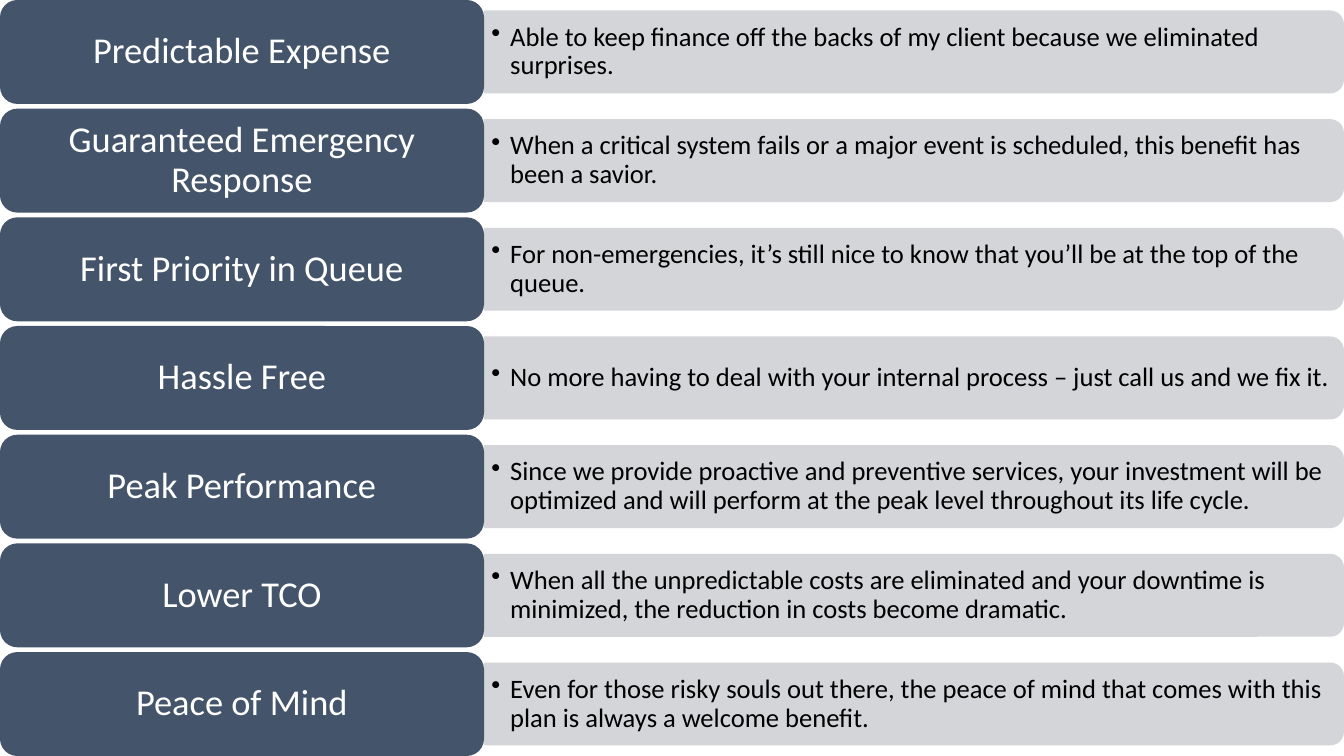
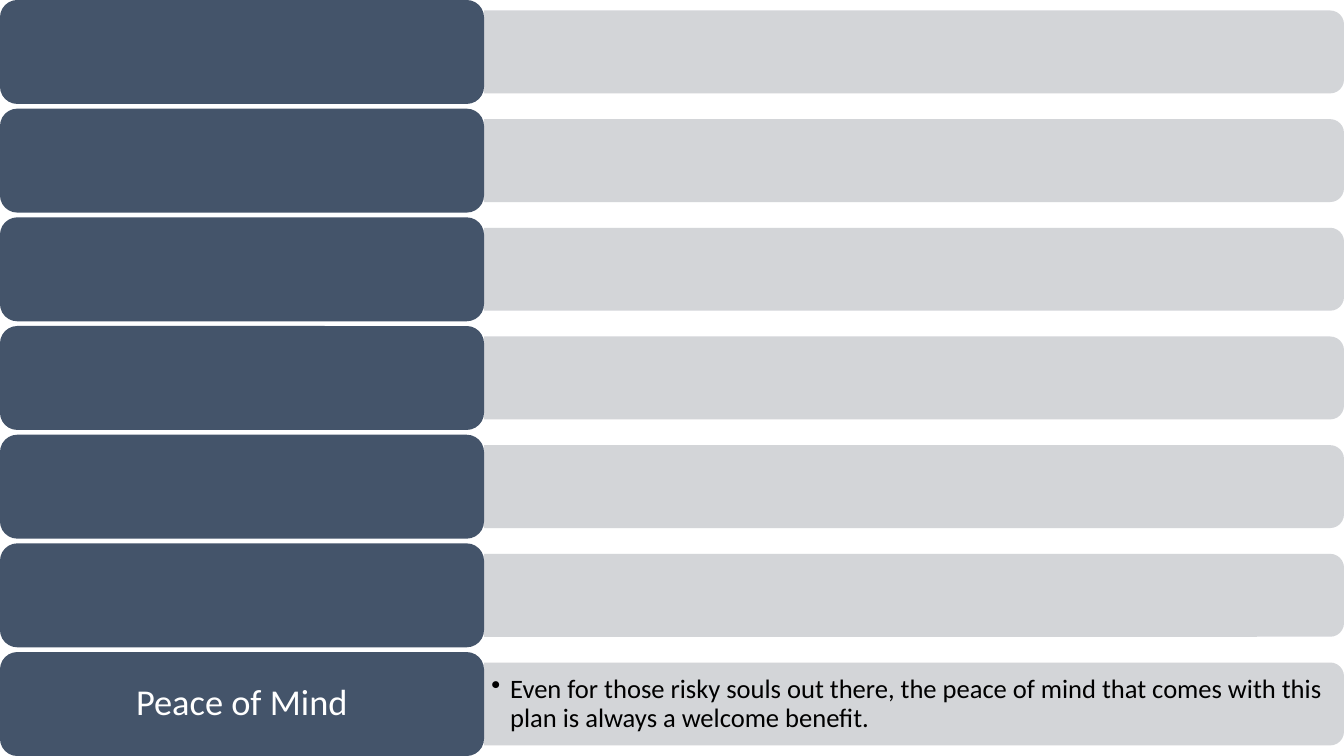
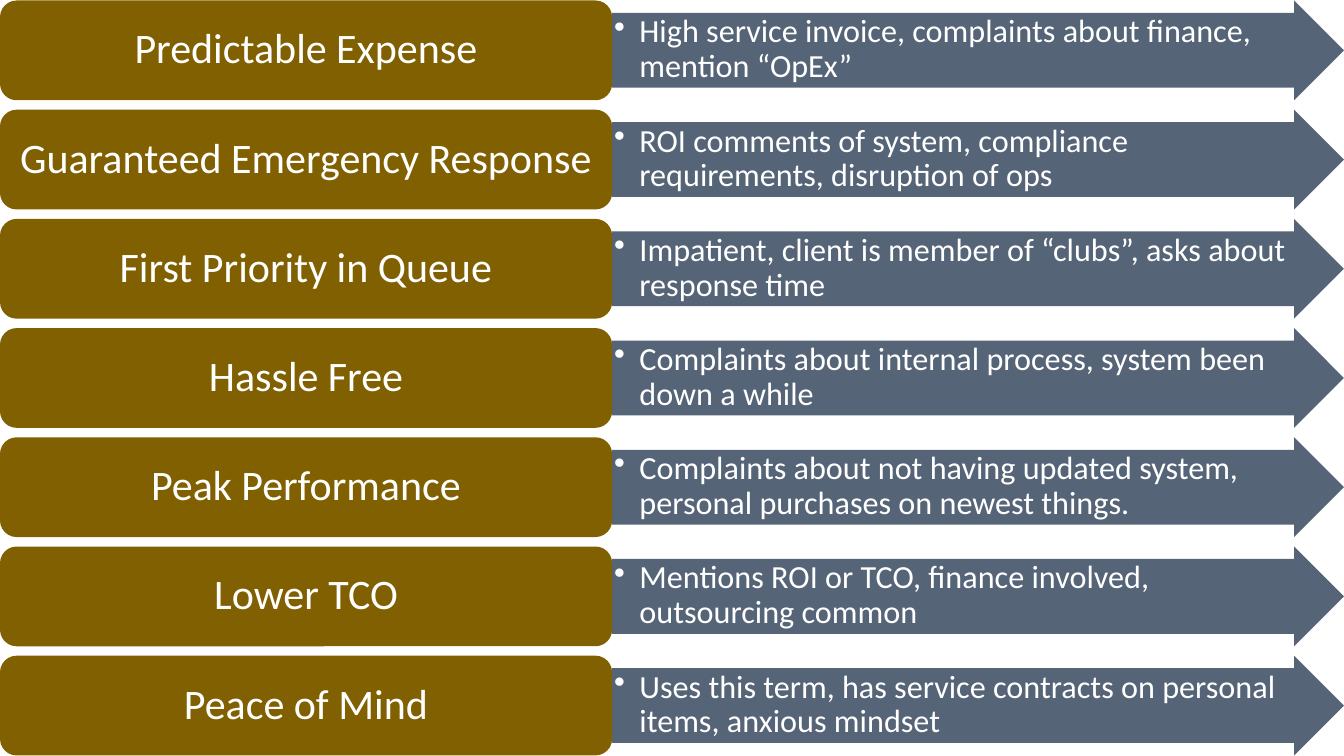
from pptx import Presentation
from pptx.dml.color import RGBColor
from pptx.enum.shapes import MSO_SHAPE
from pptx.enum.text import MSO_ANCHOR, PP_ALIGN
from pptx.oxml.ns import qn
from pptx.util import Emu, Pt
from lxml.etree import SubElement

SCALE = 9525
PAGE_WIDTH, PAGE_HEIGHT = 1280, 720
FONT = "Calibri"
SLATE, OLIVE, SILVER = "44546A", "806000", "CFD1D4"
WHITE, BLACK = "FFFFFF", "000000"

BENEFITS = [
    ("Predictable Expense",
     "Able to keep finance off the backs of my client because we eliminated surprises.",
     "High service invoice, complaints about finance, mention “OpEx”"),
    ("Guaranteed Emergency Response",
     "When a critical system fails or a major event is scheduled, this benefit has been a savior.",
     "ROI comments of system, compliance requirements, disruption of ops"),
    ("First Priority in Queue",
     "For non-emergencies, it’s still nice to know that you’ll be at the top of the queue.",
     "Impatient, client is member of “clubs”, asks about response time"),
    ("Hassle Free",
     "No more having to deal with your internal process – just call us and we fix it.",
     "Complaints about internal process, system been down a while"),
    ("Peak Performance",
     "Since we provide proactive and preventive services, your investment will be optimized "
     "and will perform at the peak level throughout its life cycle.",
     "Complaints about not having updated system, personal purchases on newest things."),
    ("Lower TCO",
     "When all the unpredictable costs are eliminated and your downtime is minimized, "
     "the reduction in costs become dramatic.",
     "Mentions ROI or TCO, finance involved, outsourcing common"),
    ("Peace of Mind",
     "Even for those risky souls out there, the peace of mind that comes with this plan "
     "is always a welcome benefit.",
     "Uses this term, has service contracts on personal items, anxious mindset"),
]

LABEL_STYLES = {
    "benefit": {"fill": SLATE, "size": 26, "margins": (10, 5, 10, 5)},
    "signal": {"fill": OLIVE, "size": 30, "margins": (12, 6, 12, 6)},
}


def px(length):
    """Turn pixels into EMU."""
    return Emu(round(length * SCALE))


def color(value):
    """Turn a hex string into a colour."""
    return RGBColor.from_string(value)


def add_block(page, kind, box, fill, opacity=100):
    """Draw a flat preset shape without outline or shadow."""
    shape = page.shapes.add_shape(kind, *map(px, box))
    shape.shadow.inherit = False
    shape.line.fill.background()
    shape.fill.solid()
    shape.fill.fore_color.rgb = color(fill)
    if opacity < 100:
        tint = shape._element.spPr.find(qn("a:solidFill"))[0]
        SubElement(tint, qn("a:alpha"), val=str(opacity * 1000))
    return shape


def write(shape, text, size, ink, margins, anchor=MSO_ANCHOR.MIDDLE, hang=0):
    """Put one paragraph in a shape, centred or with a hanging bullet."""
    frame = shape.text_frame
    sides = ("margin_left", "margin_top", "margin_right", "margin_bottom")
    layout = dict(zip(sides, map(px, margins)), word_wrap=True, vertical_anchor=anchor)
    for name, value in layout.items():
        setattr(frame, name, value)
    para = frame.paragraphs[0]
    para.line_spacing = 0.9
    para.alignment = PP_ALIGN.LEFT if hang else PP_ALIGN.CENTER
    if hang:
        para.level = 1
        properties = para._p.get_or_add_pPr()
        properties.set("marL", str(px(hang)))
        properties.set("indent", str(px(-hang)))
        SubElement(properties, qn("a:buChar"), char="•")
    span = para.add_run()
    span.text = text
    for name, value in {"name": FONT, "size": Pt(size)}.items():
        setattr(span.font, name, value)
    span.font.color.rgb = color(ink)


def add_label(page, box, text, style):
    """Draw the rounded heading at the left of a row."""
    label = add_block(page, MSO_SHAPE.ROUNDED_RECTANGLE, box, style["fill"])
    if text:
        write(label, text, style["size"], WHITE, style["margins"])


def add_bar(page, box, text):
    """Draw a bar rounded on its right side, with any bullet text."""
    left, top, width, height = box
    shift = (width - height) / 2
    upright = (left + shift, top - shift, height, width)
    bar = add_block(page, MSO_SHAPE.ROUND_2_SAME_RECTANGLE, upright, SILVER, 90)
    bar.rotation = 90
    if text:
        note = page.shapes.add_textbox(*map(px, (left, top + 4, width - 4, height - 8)))
        write(note, text, 19, BLACK, (7, 4, 8, 4), hang=18)


def add_arrow(page, box, text):
    """Draw a right arrow with its bullet text."""
    arrow = add_block(page, MSO_SHAPE.RIGHT_ARROW, box, SLATE, 90)
    arrow.adjustments[0], arrow.adjustments[1] = 0.75, 0.5
    write(arrow, text, 23, WHITE, (2, 2, 8, 2), MSO_ANCHOR.TOP, 24)


def row_tops(pitch, height):
    """Centre the evenly spaced rows on the page."""
    last = pitch * (len(BENEFITS) - 1)
    first = (PAGE_HEIGHT - height - last) / 2
    return [first + pitch * index for index in range(len(BENEFITS))]


def build_benefits(page, highlight=None):
    """Build the benefit rows, wording all of them or only a highlighted one."""
    split, height, inset = 461, 99, 10
    for top, (name, benefit, _) in zip(row_tops(103.5, height), BENEFITS):
        shown = highlight in (None, name)
        bar_box = (split, top + inset, PAGE_WIDTH - split, height - 2 * inset)
        add_bar(page, bar_box, benefit if shown else "")
        add_label(page, (0, top, split, height), name if shown else "",
                  LABEL_STYLES["benefit"])


def build_signals(page):
    """Build the rows that pair each benefit with its client signals."""
    split, height = 583, 95
    for top, (name, _, signal) in zip(row_tops(104, height), BENEFITS):
        add_arrow(page, (split, top, PAGE_WIDTH - split, height), signal)
        add_label(page, (0, top, split, height), name, LABEL_STYLES["signal"])


def main():
    """Build and save the deck."""
    deck = Presentation()
    deck.slide_width, deck.slide_height = px(PAGE_WIDTH), px(PAGE_HEIGHT)
    blank = deck.slide_layouts[6]
    build_benefits(deck.slides.add_slide(blank))
    build_benefits(deck.slides.add_slide(blank), "Peace of Mind")
    build_signals(deck.slides.add_slide(blank))
    deck.save("out.pptx")


if __name__ == "__main__":
    main()
